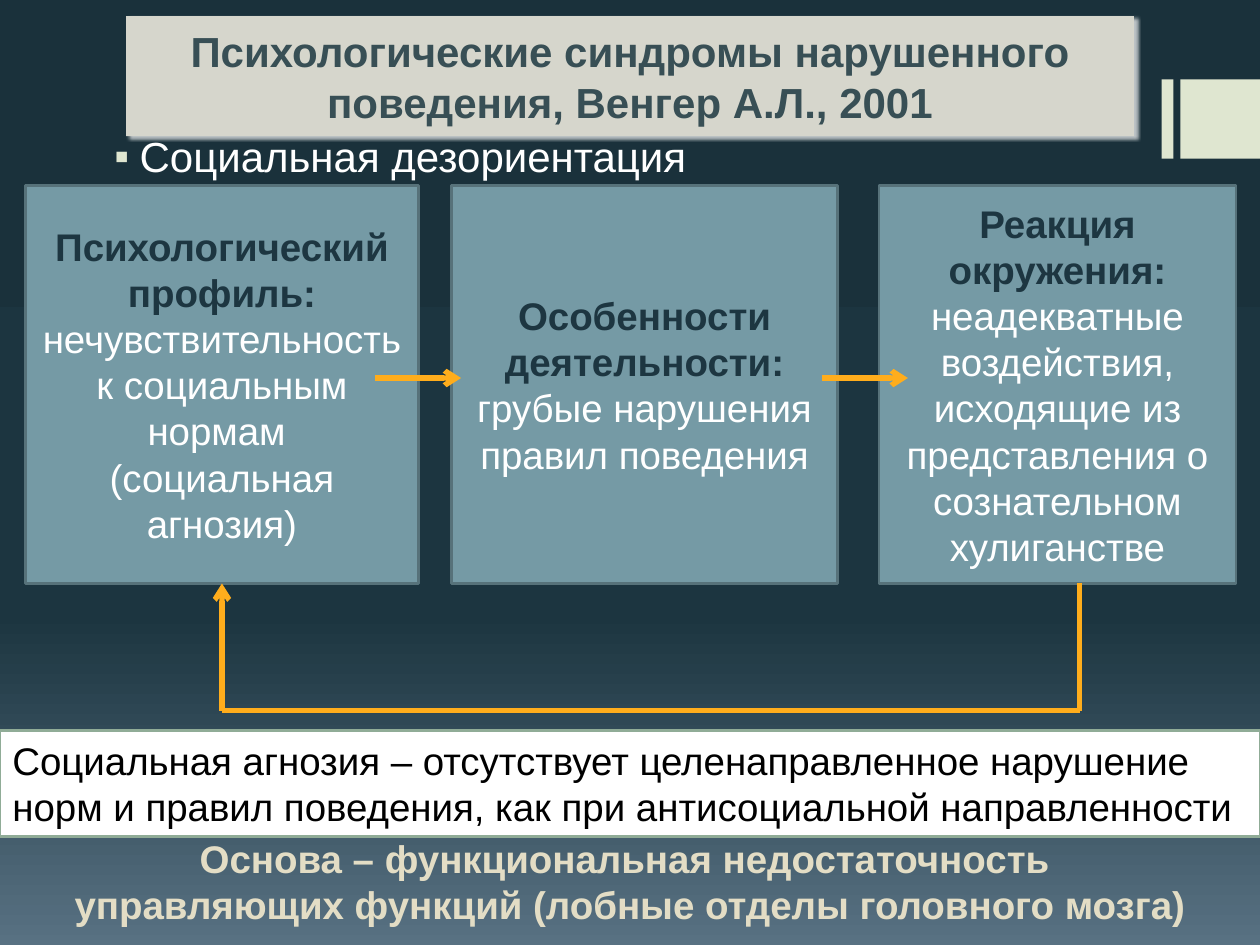
from copy import deepcopy
from dataclasses import dataclass

from lxml import etree
from pptx import Presentation
from pptx.dml.color import RGBColor
from pptx.enum.shapes import MSO_CONNECTOR, MSO_SHAPE
from pptx.enum.text import MSO_ANCHOR, PP_ALIGN
from pptx.oxml.ns import qn
from pptx.util import Inches, Pt

RECT, STRAIGHT = MSO_SHAPE.RECTANGLE, MSO_CONNECTOR.STRAIGHT
TOP, MIDDLE = MSO_ANCHOR.TOP, MSO_ANCHOR.MIDDLE
LEFT, CENTER = PP_ALIGN.LEFT, PP_ALIGN.CENTER
BOTTOM_SIDE = 2


@dataclass(frozen=True)
class Theme:
    """Colours, font and type sizes of the slide."""
    font: str = "Arial"
    large: int = 24
    body: int = 22
    sky: tuple = ((0, "1A313B"), (0.65, "1C3540"), (1, "587182"))
    accent: str = "DFE6D0"
    banner: str = "D6D6CC"
    heading: str = "384F55"
    card: str = "759AA5"
    card_line: str = "57727A"
    dark: str = "1D3641"
    white: str = "FFFFFF"
    black: str = "000000"
    arrow: str = "FFAD1C"
    note_line: str = "90AC97"
    conclusion: str = "E3DDC5"


@dataclass(frozen=True)
class Box:
    """A rectangle in inches that can be divided by shares."""
    x: float
    y: float
    w: float
    h: float

    def point(self, fx, fy):
        """Return the point at the given shares of the box."""
        return Inches(self.x + self.w * fx), Inches(self.y + self.h * fy)

    def inner(self, fx, fy, fw, fh):
        """Return the inner box at the given shares."""
        return Box(self.x + self.w * fx, self.y + self.h * fy, self.w * fw, self.h * fh)

    def frame(self):
        """Return left, top, width and height as lengths."""
        return [Inches(v) for v in (self.x, self.y, self.w, self.h)]


THEME = Theme()
PAGE = Box(0, 0, 10, 7.5)
COLUMNS = ((0, 0.325), (0.352, 0.319), (0.705, 0.295))
CARD_SHARE = 0.758
CARDS = (
    (("Психологический профиль: ", "нечувствительность к социальным нормам "),
     ("", "(социальная агнозия)")),
    (("Особенности деятельности: ", "грубые нарушения правил поведения"),),
    (("Реакция окружения: ", "неадекватные воздействия, исходящие из "
      "представления о сознательном хулиганстве"),),
)


def rgb(value):
    """Turn a hex string into a colour."""
    return RGBColor.from_string(value)


def write(tf, paragraphs, align=LEFT, anchor=TOP):
    """Fill a text frame with paragraphs of (text, format) runs."""
    tf.word_wrap, tf.vertical_anchor = True, anchor
    for i, runs in enumerate(paragraphs):
        p = tf.paragraphs[0] if i == 0 else tf.add_paragraph()
        p.alignment = align
        for text, style in runs:
            r = p.add_run()
            r.text = text
            r.font.color.rgb = rgb(style["color"])
            values = {"name": THEME.font, "size": Pt(style.get("size", THEME.body)),
                      "bold": style.get("bold", False)}
            for name, value in values.items():
                setattr(r.font, name, value)


def add_rect(s, box, fill, line=None):
    """Add a flat rectangle with an optional outline."""
    sp = s.shapes.add_shape(RECT, *box.frame())
    sp.shadow.inherit = False
    sp.fill.solid()
    sp.fill.fore_color.rgb = rgb(fill)
    if line:
        sp.line.color.rgb = rgb(line)
        sp.line.width = Pt(1.5)
    else:
        sp.line.fill.background()
    return sp


def add_line(s, start, end, arrow=False):
    """Add a straight line, with an open arrowhead at its end if asked."""
    cx = s.shapes.add_connector(STRAIGHT, *start, *end)
    cx.line.color.rgb = rgb(THEME.arrow)
    cx.line.width = Pt(3)
    pr = cx._element.spPr
    if arrow:
        etree.SubElement(pr.find(qn("a:ln")), qn("a:tailEnd"), type="arrow")
    etree.SubElement(pr, qn("a:effectLst"))
    return cx


def paint_background(s):
    """Paint the vertical gradient of the slide."""
    fill = s.background.fill
    fill.gradient()
    fill.gradient_angle = 270
    stops = s._element.find(".//" + qn("a:gsLst"))
    stops.insert(1, deepcopy(stops[0]))
    for stop, (position, color) in zip(fill.gradient_stops, THEME.sky):
        stop.position = position
        stop.color.rgb = rgb(color)


def add_corner(s, box):
    """Add the narrow and the wide bar at the right edge."""
    for x, w in ((0, 0.12), (0.19, 0.81)):
        add_rect(s, box.inner(x, 0, w, 1), THEME.accent)


def add_title(s, box):
    """Format the title as a banner with a soft shadow."""
    title = s.shapes.title
    title.left, title.top, title.width, title.height = box.frame()
    title.fill.solid()
    title.fill.fore_color.rgb = rgb(THEME.banner)
    effects = etree.SubElement(title._element.spPr, qn("a:effectLst"))
    shadow = etree.SubElement(effects, qn("a:outerShdw"), blurRad=str(Pt(2)),
                              dist=str(Pt(2)), dir="2400000", algn="tl", rotWithShape="0")
    color = etree.SubElement(shadow, qn("a:srgbClr"), val=THEME.white)
    etree.SubElement(color, qn("a:alpha"), val="71000")
    style = {"color": THEME.heading, "size": THEME.large, "bold": True}
    write(title.text_frame,
          [[("Психологические синдромы нарушенного поведения, Венгер А.Л., 2001", style)]],
          CENTER, MIDDLE)


def add_topic(s, box):
    """Add the bulleted topic line."""
    tf = s.shapes.add_textbox(*box.frame()).text_frame
    write(tf, [[("Социальная дезориентация", {"color": THEME.white, "size": THEME.large})]])
    p = tf.paragraphs[0]
    p.space_before = Pt(THEME.large * 0.2)
    pr = p._p.get_or_add_pPr()
    pr.set("marL", str(Inches(0.25)))
    pr.set("indent", str(Inches(-0.2)))
    color = etree.SubElement(pr, qn("a:buClr"))
    etree.SubElement(color, qn("a:srgbClr"), val=THEME.accent)
    etree.SubElement(pr, qn("a:buFont"), typeface=THEME.font)
    etree.SubElement(pr, qn("a:buChar"), char="▪")


def add_flow(s, box):
    """Add the three cards, the arrows between them and the return loop."""
    cards = []
    for (x, w), content in zip(COLUMNS, CARDS):
        card = add_rect(s, box.inner(x, 0, w, CARD_SHARE), THEME.card, THEME.card_line)
        styles = {"color": THEME.dark, "bold": True}, {"color": THEME.white}
        write(card.text_frame, [[run for run in zip(texts, styles) if run[0]]
                                for texts in content], CENTER, MIDDLE)
        cards.append(card)
    for x in (0.289, 0.658):
        add_line(s, box.point(x, 0.367), box.point(x + 0.071, 0.367), arrow=True)
    first, last = COLUMNS[0][1] / 2, 0.871
    corners = [box.point(*at) for at in
               ((last, CARD_SHARE), (last, 1), (first, 1), (first, CARD_SHARE))]
    for i, (start, end) in enumerate(zip(corners, corners[1:])):
        cx = add_line(s, start, end, arrow=i == 2)
    cx.end_connect(cards[0], BOTTOM_SIDE)


def add_notes_band(s, box):
    """Add the white definition strip and the conclusion below it."""
    strip = add_rect(s, box.inner(0, 0, 1, 0.52), THEME.white, THEME.note_line)
    write(strip.text_frame, [[("Социальная агнозия – отсутствует целенаправленное нарушение "
                               "норм и правил поведения, как при антисоциальной "
                               "направленности", {"color": THEME.black})]])
    base = s.shapes.add_textbox(*box.inner(0, 0.48, 1, 0.52).frame())
    style = {"color": THEME.conclusion, "bold": True}
    lines = ("Основа – функциональная недостаточность ",
             "управляющих функций (лобные отделы головного мозга)")
    write(base.text_frame, [[(line, style)] for line in lines], CENTER)


def main():
    """Build and save the slide."""
    prs = Presentation()
    prs.slide_width, prs.slide_height = Inches(PAGE.w), Inches(PAGE.h)
    s = prs.slides.add_slide(prs.slide_layouts[5])
    paint_background(s)
    add_corner(s, PAGE.inner(0.922, 0.084, 0.078, 0.084))
    add_title(s, PAGE.inner(0.1, 0.017, 0.8, 0.127))
    add_flow(s, PAGE.inner(0.02, 0.196, 0.961, 0.556))
    add_topic(s, PAGE.inner(0.076, 0.132, 0.8, 0.085))
    add_notes_band(s, PAGE.inner(0, 0.773, 1, 0.216))
    prs.save("out.pptx")


if __name__ == "__main__":
    main()
